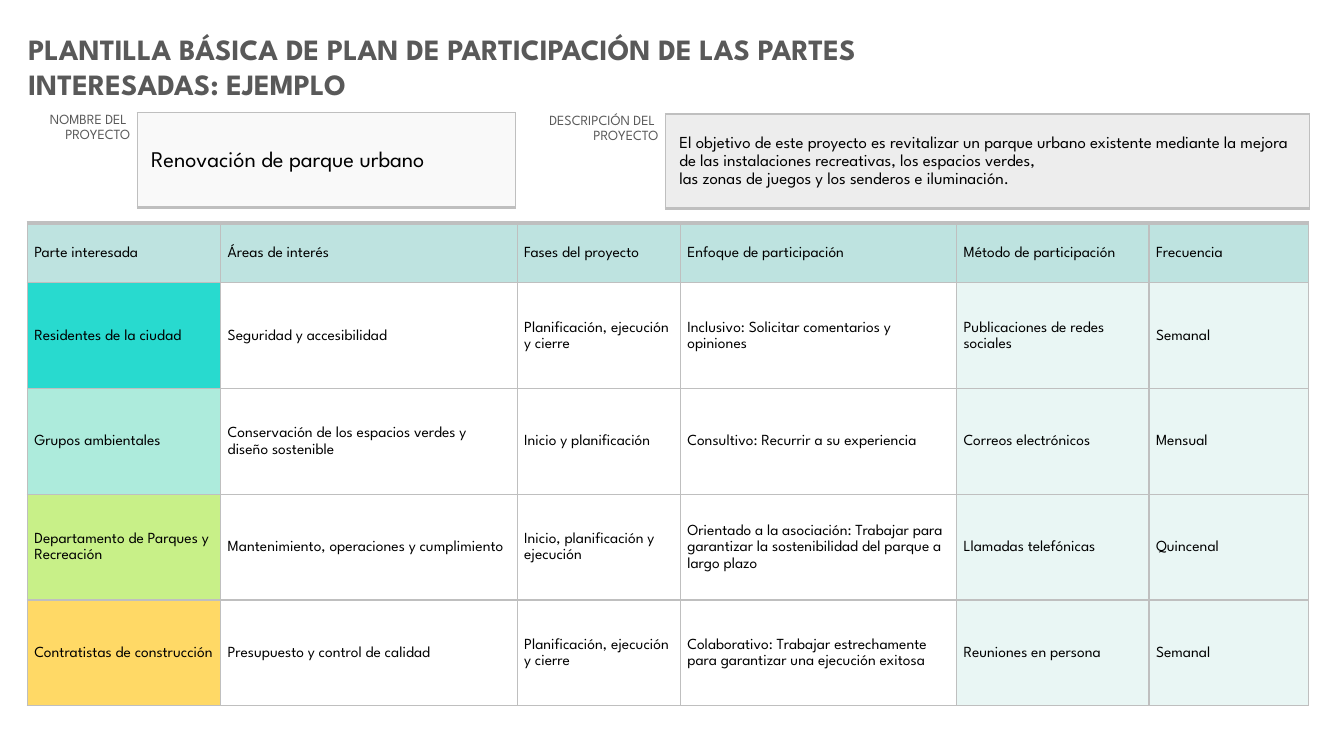
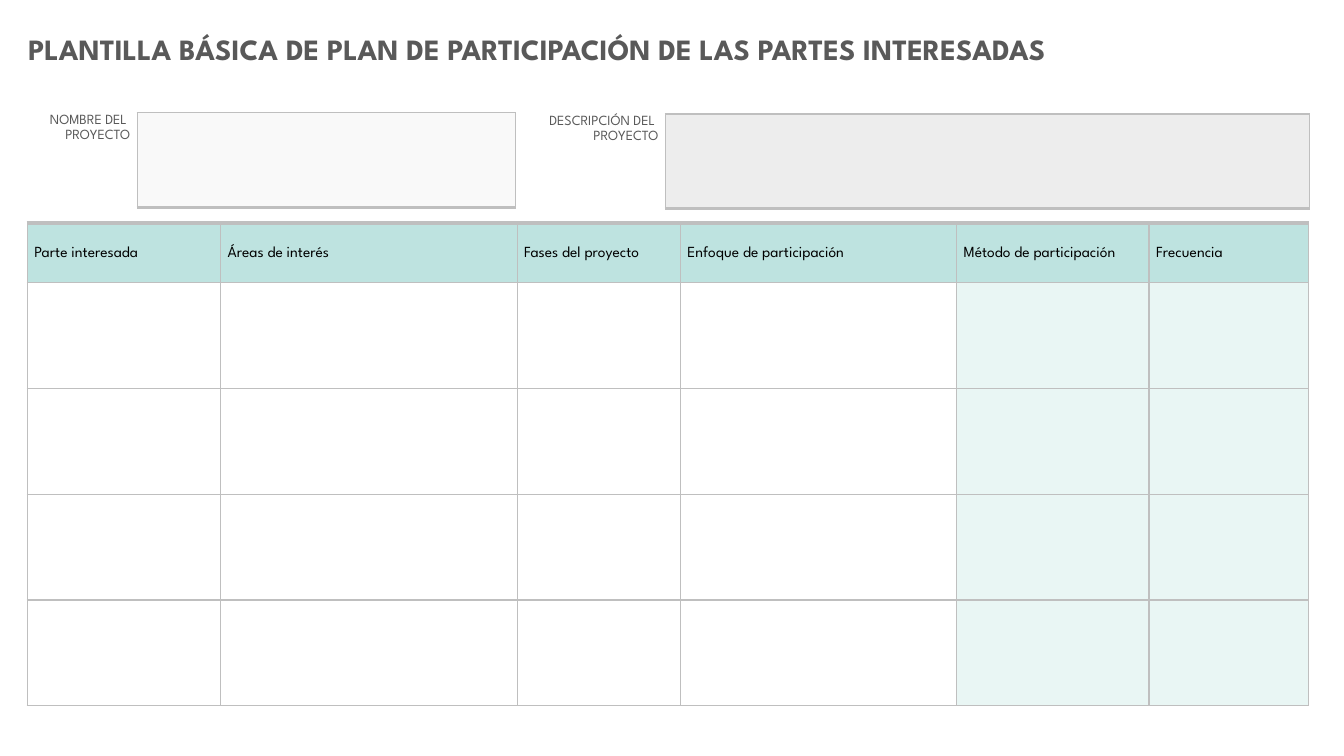
from dataclasses import dataclass

from lxml.etree import SubElement
from pptx import Presentation
from pptx.dml.color import RGBColor
from pptx.enum.text import MSO_ANCHOR as Anchor, MSO_AUTO_SIZE as Fit, PP_ALIGN as Align
from pptx.oxml.ns import qn
from pptx.slide import Slide
from pptx.table import Table, _Cell as Cell
from pptx.util import Pt

FONT = "League Spartan"
GREY = RGBColor(0x59, 0x59, 0x59)
BLACK = RGBColor(0x00, 0x00, 0x00)
WHITE = RGBColor(0xFF, 0xFF, 0xFF)
RULE = RGBColor(0xBF, 0xBF, 0xBF)
PALE = RGBColor(0xF9, 0xF9, 0xF9)
SILVER = RGBColor(0xED, 0xED, 0xED)
TEAL = RGBColor(0xBE, 0xE3, 0xE0)
MIST = RGBColor(0xE9, 0xF6, 0xF4)
TURQUOISE = RGBColor(0x28, 0xDA, 0xCF)
MINT = RGBColor(0xAD, 0xEB, 0xDC)
LIME = RGBColor(0xC8, 0xF0, 0x88)
AMBER = RGBColor(0xFF, 0xD9, 0x66)

PLAIN = "{2D5ABB26-0587-4C30-8999-92F81FD0307C}"
INSET = 5
TITLE = "PLANTILLA BÁSICA DE PLAN DE PARTICIPACIÓN DE LAS PARTES INTERESADAS"
HEADS = ("Parte interesada", "Áreas de interés", "Fases del proyecto",
         "Enfoque de participación", "Método de participación", "Frecuencia")
COLS = (138.2, 211.7, 116.6, 197.3, 137.5, 113.8)
ROWS = (42.5,) + (75.6,) * 4
FILLS = (WHITE,) * 4 + (MIST,) * 2
BLANK = ("",) * len(HEADS)


@dataclass(frozen=True)
class Field:
    label: str
    left: float
    top: float
    cols: tuple[float, float]
    fill: RGBColor
    size: float


@dataclass(frozen=True)
class Party:
    cells: tuple[str, ...] = BLANK
    fill: RGBColor = WHITE


@dataclass(frozen=True)
class Plan:
    title: str
    width: float
    values: tuple[str, str]
    parties: tuple[Party, ...]


FIELDS = (
    Field("NOMBRE DEL \nPROYECTO", 13, 80.6, (85, 270), PALE, 16),
    Field("DESCRIPCIÓN DEL \nPROYECTO", 368, 81.4, (107.3, 460), SILVER, 12),
)

PLANS = (
    Plan(
        f"{TITLE}: EJEMPLO", 657.4,
        ("Renovación de parque urbano",
         "El objetivo de este proyecto es revitalizar un parque urbano existente "
         "mediante la mejora de las instalaciones recreativas, los espacios verdes, \n"
         "las zonas de juegos y los senderos e iluminación."),
        (
            Party(("Residentes de la ciudad", "Seguridad y accesibilidad",
                   "Planificación, ejecución y cierre",
                   "Inclusivo: Solicitar comentarios y opiniones",
                   "Publicaciones de redes sociales", "Semanal"), TURQUOISE),
            Party(("Grupos ambientales",
                   "Conservación de los espacios verdes y diseño sostenible",
                   "Inicio y planificación", "Consultivo: Recurrir a su experiencia",
                   "Correos electrónicos", "Mensual"), MINT),
            Party(("Departamento de Parques y Recreación",
                   "Mantenimiento, operaciones y cumplimiento",
                   "Inicio, planificación y ejecución",
                   "Orientado a la asociación: Trabajar para garantizar la "
                   "sostenibilidad del parque a largo plazo",
                   "Llamadas telefónicas", "Quincenal"), LIME),
            Party(("Contratistas de construcción", "Presupuesto y control de calidad",
                   "Planificación, ejecución y cierre",
                   "Colaborativo: Trabajar estrechamente para garantizar una "
                   "ejecución exitosa",
                   "Reuniones en persona", "Semanal"), AMBER),
        ),
    ),
    Plan(TITLE, 822.2, ("", ""), (Party(),) * 4),
)


def add_grid(slide: Slide, left: float, top: float,
             cols: tuple[float, ...], rows: tuple[float, ...]) -> Table:
    frame = slide.shapes.add_table(len(rows), len(cols), Pt(left), Pt(top),
                                   Pt(sum(cols)), Pt(sum(rows)))
    table = frame.table
    table.first_row = table.horz_banding = False
    table._tbl.tblPr.find(qn("a:tableStyleId")).text = PLAIN
    for col, width in zip(table.columns, cols):
        col.width = Pt(width)
    for row, height in zip(table.rows, rows):
        row.height = Pt(height)
    return table


def set_edges(cell: Cell, top: float = 1, base: float = 1) -> None:
    props = cell._tc.get_or_add_tcPr()
    edges = (("a:lnL", 1), ("a:lnR", 1), ("a:lnT", top), ("a:lnB", base))
    for spot, (tag, width) in enumerate(edges):
        line = SubElement(props, qn(tag), w=str(Pt(width)))
        paint = SubElement(line, qn("a:solidFill"))
        SubElement(paint, qn("a:srgbClr"), val=str(RULE))
        props.insert(spot, line)


def set_text(cell: Cell, text: str, size: float, color: RGBColor = BLACK,
             align: Align = Align.LEFT, anchor: Anchor = Anchor.MIDDLE,
             inset: float = INSET) -> None:
    cell.margin_left, cell.margin_right = Pt(inset), Pt(INSET)
    cell.margin_top = cell.margin_bottom = Pt(0)
    cell.vertical_anchor = anchor
    para = cell.text_frame.paragraphs[0]
    para.text = text
    para.alignment = align
    para.line_spacing = 1.15
    font = para.font
    font.name, font.size, font.color.rgb = FONT, Pt(size), color


def set_fill(cell: Cell, color: RGBColor) -> None:
    cell.fill.solid()
    cell.fill.fore_color.rgb = color


def add_title(slide: Slide, plan: Plan) -> None:
    title = slide.shapes.title
    title.left, title.top = Pt(13), Pt(18.7)
    title.width, title.height = Pt(plan.width), Pt(32.4)
    frame = title.text_frame
    frame.word_wrap = True
    frame.auto_size = Fit.SHAPE_TO_FIT_TEXT
    frame.vertical_anchor = Anchor.TOP
    para = frame.paragraphs[0]
    para.text = plan.title
    para.alignment = Align.LEFT
    font = para.font
    font.name, font.size, font.bold, font.color.rgb = FONT, Pt(21), True, GREY


def add_field(slide: Slide, field: Field, value: str) -> None:
    table = add_grid(slide, field.left, field.top, field.cols, (67.7,))
    label, box = table.cell(0, 0), table.cell(0, 1)
    set_text(label, field.label, 10, GREY, Align.RIGHT, Anchor.TOP)
    set_text(box, value, field.size, inset=2 * INSET)
    set_fill(box, field.fill)
    set_edges(box, base=2.25)


def add_parties(slide: Slide, parties: tuple[Party, ...]) -> None:
    table = add_grid(slide, 19.5, 159.3, COLS, ROWS)
    lines = [(HEADS, (TEAL,) * len(HEADS))]
    lines += [(party.cells, (party.fill, *FILLS[1:])) for party in parties]
    for row, (texts, fills) in enumerate(lines):
        for col, (text, fill) in enumerate(zip(texts, fills)):
            cell = table.cell(row, col)
            set_text(cell, text, 11)
            set_fill(cell, fill)
            set_edges(cell, top=1 if row else 3)


def main() -> None:
    deck = Presentation()
    deck.slide_width, deck.slide_height = Pt(960), Pt(540)
    for plan in PLANS:
        slide = deck.slides.add_slide(deck.slide_layouts[5])
        add_title(slide, plan)
        for field, value in zip(FIELDS, plan.values):
            add_field(slide, field, value)
        add_parties(slide, plan.parties)
    deck.save("out.pptx")


if __name__ == "__main__":
    main()
